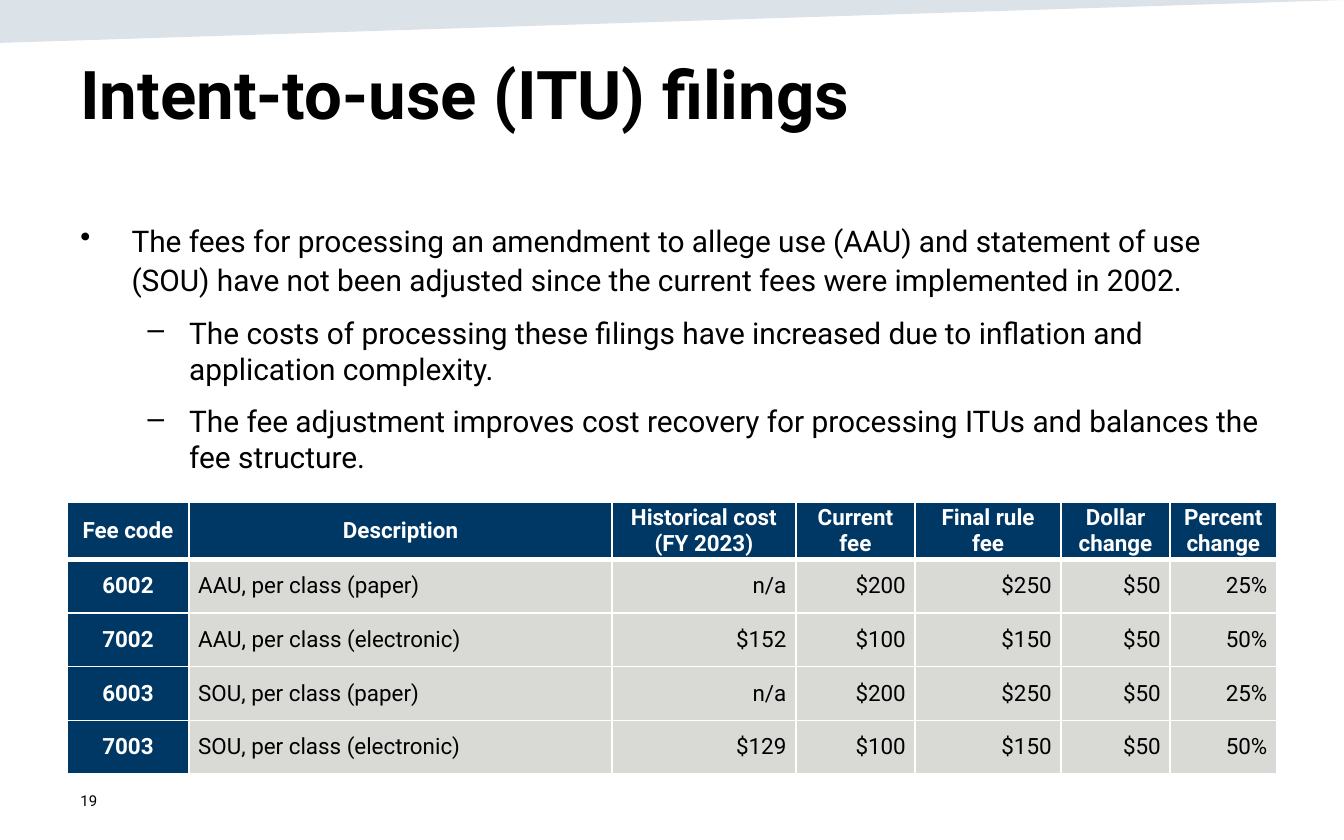
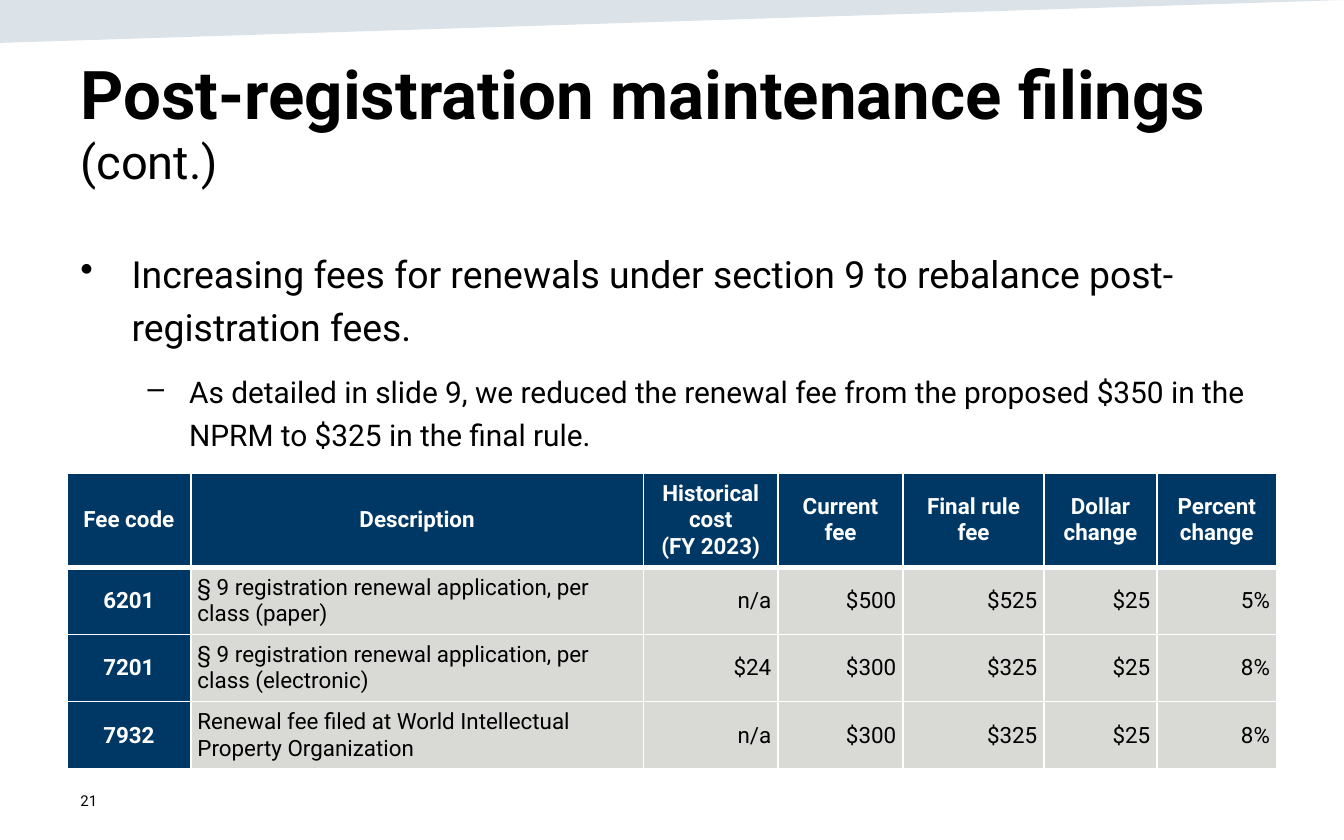
import pptx
import pptx.dml.color
import pptx.enum.text
import pptx.oxml
import pptx.oxml.ns
import pptx.util
from lxml import etree

Pt = pptx.util.Pt
ALIGN = pptx.enum.text.PP_ALIGN
ANCHOR = pptx.enum.text.MSO_ANCHOR
qn = pptx.oxml.ns.qn

FONT = "Roboto"
BLACK, WHITE = "000000", "FFFFFF"
NAVY, GREY, BAND = "003865", "D9D9D6", "164469"

WIDTH, HEIGHT = 720, 450
MARGIN, CONTENT_WIDTH = 36, 648
TITLE_BOX = (MARGIN, 24.5, CONTENT_WIDTH, 75)
NUMBER_BOX = (MARGIN, 417, 162, 24)
BAND_BOX = (0, 0, WIDTH, 23)

# Bullet sign, left margin and hanging indent for each level
BULLETS = [("•", 27.4, 27.4), ("–", 58.3, 22.3)]

HEADINGS = ["Fee code", "Description", "Historical cost\n(FY 2023)", "Current fee",
            "Final rule fee", "Dollar change", "Percent change"]

SLIDES = [
    {
        "number": "19",
        "title": [("Intent-to-use (ITU) filings", 36, True)],
        "body_box": (MARGIN, 113.8, CONTENT_WIDTH, 298),
        # level, size, line spacing, text
        "body": [
            (0, 16, 1.1, "The fees for processing an amendment to allege use (AAU) and statement of use "
                         "(SOU) have not been adjusted since the current fees were implemented in 2002."),
            (1, 16, 1, "The costs of processing these filings have increased due to inflation and "
                       "application complexity."),
            (1, 16, 1, "The fee adjustment improves cost recovery for processing ITUs and balances "
                       "the fee structure."),
        ],
        "table_top": 269,
        "columns": [65.2, 226.8, 98.3, 64, 78.2, 58.4, 57.1],
        "heights": (30.5, 28.8),
        "cell_margins": (5, 0),
        "fees": [
            ["6002", "AAU, per class (paper)", "n/a", "$200", "$250", "$50", "25%"],
            ["7002", "AAU, per class (electronic)", "$152", "$100", "$150", "$50", "50%"],
            ["6003", "SOU, per class (paper)", "n/a", "$200", "$250", "$50", "25%"],
            ["7003", "SOU, per class (electronic)", "$129", "$100", "$150", "$50", "50%"],
        ],
    },
    {
        "number": "21",
        "title": [("Post-registration maintenance filings ", 36, True), ("(cont.)", 25.2, False)],
        "body_box": (MARGIN, 126, CONTENT_WIDTH, 286),
        "body": [
            (0, 20, 1.2, "Increasing fees for renewals under section 9 to rebalance "
                         "post-registration fees."),
            (1, 16, 1.2, "As detailed in slide 9, we reduced the renewal fee from the proposed $350 "
                         "in the NPRM to $325 in the final rule."),
        ],
        "table_top": 253.4,
        "columns": [66.2, 242.6, 72, 67, 75.6, 60.5, 64.1],
        "heights": (49.4, 35.3),
        "cell_margins": (3.6, 3.6),
        "fees": [
            ["6201", "§ 9 registration renewal application, per class (paper)",
             "n/a", "$500", "$525", "$25", "5%"],
            ["7201", "§ 9 registration renewal application, per class (electronic)",
             "$24", "$300", "$325", "$25", "8%"],
            ["7932", "Renewal fee filed at World Intellectual Property Organization",
             "n/a", "$300", "$325", "$25", "8%"],
        ],
    },
]


def rgb(value):
    return pptx.dml.color.RGBColor.from_string(value)


def add_run(paragraph, text, size, color=BLACK, bold=False):
    run = paragraph.add_run()
    run.text = text
    run.font.name = FONT
    run.font.size = Pt(size)
    run.font.bold = bold
    run.font.color.rgb = rgb(color)


def add_text_frame(slide, box, anchor=ANCHOR.TOP):
    frame = slide.shapes.add_textbox(*map(Pt, box)).text_frame
    frame.word_wrap = True
    frame.vertical_anchor = anchor
    return frame


def next_paragraph(frame, index):
    return frame.add_paragraph() if index else frame.paragraphs[0]


def add_band(slide, box):
    """Draw the pale wedge that narrows to the right."""
    left, top, width, height = map(Pt, box)
    builder = slide.shapes.build_freeform(left, top)
    builder.add_line_segments([(left, top + height), (left + width, top)])
    shape = builder.convert_to_shape()
    shape.shadow.inherit = False
    shape.line.fill.background()
    shape.fill.solid()
    shape.fill.fore_color.rgb = rgb(BAND)
    color = shape.fill._xPr.find(".//" + qn("a:srgbClr"))
    etree.SubElement(color, qn("a:alpha"), val="15000")


def add_title(slide, box, runs):
    paragraph = add_text_frame(slide, box).paragraphs[0]
    for text, size, bold in runs:
        add_run(paragraph, text, size, bold=bold)


def add_body(slide, box, items):
    frame = add_text_frame(slide, box)
    for index, (level, size, spacing, text) in enumerate(items):
        paragraph = next_paragraph(frame, index)
        paragraph.level = level
        paragraph.space_before = Pt(9)
        paragraph.line_spacing = float(spacing)
        sign, margin, hanging = BULLETS[level]
        properties = paragraph._p.get_or_add_pPr()
        properties.set("marL", str(Pt(margin)))
        properties.set("indent", str(-Pt(hanging)))
        etree.SubElement(properties, qn("a:buChar"), char=sign)
        add_run(paragraph, text, size)


def set_borders(cell, bottom):
    properties = cell._tc.get_or_add_tcPr()
    for index, (side, width) in enumerate([("L", 1), ("R", 1), ("T", 1), ("B", bottom)]):
        line = etree.Element(qn("a:ln" + side), w=str(Pt(width)))
        fill = etree.SubElement(line, qn("a:solidFill"))
        etree.SubElement(fill, qn("a:srgbClr"), val=WHITE)
        properties.insert(index, line)


def fill_cell(cell, text, row, column, margins):
    is_header = row == 0
    is_dark = is_header or column == 0
    cell.fill.solid()
    cell.fill.fore_color.rgb = rgb(NAVY if is_dark else GREY)
    cell.vertical_anchor = ANCHOR.MIDDLE
    cell.margin_left = cell.margin_right = Pt(margins[0])
    cell.margin_top = cell.margin_bottom = Pt(margins[1])
    set_borders(cell, 3 if is_header else 1)
    for index, line in enumerate(text.split("\n")):
        paragraph = next_paragraph(cell.text_frame, index)
        if is_dark:
            paragraph.alignment = ALIGN.CENTER
        else:
            paragraph.alignment = ALIGN.LEFT if column == 1 else ALIGN.RIGHT
        if not is_header:
            paragraph.space_before = paragraph.space_after = Pt(6)
        add_run(paragraph, line, 12, WHITE if is_dark else BLACK, is_dark)


def add_fee_table(slide, left, top, columns, heights, margins, fees):
    rows = [HEADINGS] + fees
    header_height, fee_height = heights
    total = header_height + fee_height * len(fees)
    table = slide.shapes.add_table(len(rows), len(columns), Pt(left), Pt(top),
                                   Pt(sum(columns)), Pt(total)).table
    for column, width in zip(table.columns, columns):
        column.width = Pt(width)
    for row, texts in enumerate(rows):
        table.rows[row].height = Pt(fee_height if row else header_height)
        for column, text in enumerate(texts):
            fill_cell(table.cell(row, column), text, row, column, margins)


def add_slide_number(slide, box, number):
    add_run(add_text_frame(slide, box, ANCHOR.MIDDLE).paragraphs[0], number, 8)


def add_fee_slide(presentation, content):
    slide = presentation.slides.add_slide(presentation.slide_layouts[6])
    add_band(slide, BAND_BOX)
    add_title(slide, TITLE_BOX, content["title"])
    add_body(slide, content["body_box"], content["body"])
    add_fee_table(slide, MARGIN, content["table_top"], content["columns"],
                  content["heights"], content["cell_margins"], content["fees"])
    add_slide_number(slide, NUMBER_BOX, content["number"])


def main():
    presentation = pptx.Presentation()
    presentation.slide_width = Pt(WIDTH)
    presentation.slide_height = Pt(HEIGHT)
    for content in SLIDES:
        add_fee_slide(presentation, content)
    presentation.save("out.pptx")


if __name__ == "__main__":
    main()
